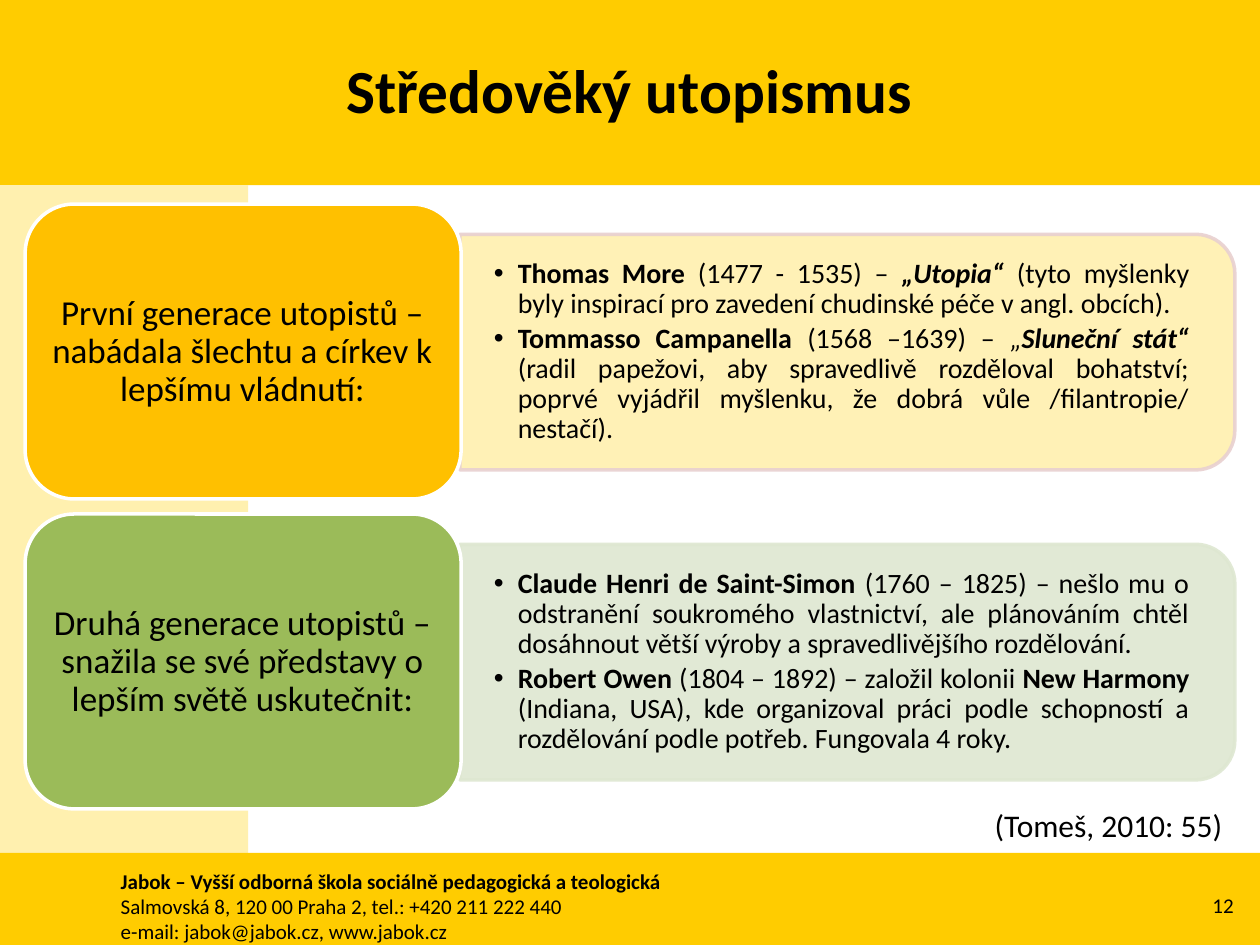
from dataclasses import dataclass

from lxml.etree import SubElement
from pptx import Presentation
from pptx.dml.color import RGBColor
from pptx.enum.shapes import MSO_SHAPE
from pptx.enum.text import MSO_ANCHOR, PP_ALIGN
from pptx.oxml.ns import qn
from pptx.util import Inches, Pt

BLACK = RGBColor(0x00, 0x00, 0x00)
WHITE = RGBColor(0xFF, 0xFF, 0xFF)
YELLOW = RGBColor(0xFF, 0xCC, 0x00)
CREAM = RGBColor(0xFF, 0xF0, 0xAF)
AMBER = RGBColor(0xFF, 0xC0, 0x00)
PINK = RGBColor(0xE8, 0xD0, 0xD0)
GREEN = RGBColor(0x9B, 0xBB, 0x59)
PALE_GREEN = RGBColor(0xDE, 0xE7, 0xD1)

BOLD = {"bold": True}
ITALIC = {"italic": True}
BOLD_ITALIC = {"bold": True, "italic": True}

FIRST_ROW_TOP = 1.62
ROW_PITCH = 2.46
PANEL_OPACITY = 90

Run = tuple[str, dict]
Box = tuple[float, float, float, float]


@dataclass
class Generation:
    label: str
    label_fill: RGBColor
    panel_fill: RGBColor
    panel_line: RGBColor
    bullets: list[list[Run]]


GENERATIONS = [
    Generation(
        "První generace utopistů – nabádala šlechtu a církev k lepšímu vládnutí:",
        AMBER, CREAM, PINK,
        [
            [("Thomas More ", BOLD), ("(1477 - 1535) – ", {}),
             ("„Utopia“ ", BOLD_ITALIC),
             ("(tyto myšlenky byly inspirací pro zavedení chudinské péče "
              "v angl. obcích).", {})],
            [("Tommasso Campanella ", BOLD), ("(1568 –1639) – ", {}),
             ("„", ITALIC), ("Sluneční stát“ ", BOLD_ITALIC),
             ("(radil papežovi, aby spravedlivě rozděloval bohatství; poprvé "
              "vyjádřil myšlenku, že dobrá vůle /filantropie/ nestačí).", {})],
        ]),
    Generation(
        "Druhá generace utopistů – snažila se své představy o lepším světě uskutečnit:",
        GREEN, PALE_GREEN, PALE_GREEN,
        [
            [("Claude Henri de Saint-Simon ", BOLD),
             ("(1760 – 1825) – nešlo mu o odstranění soukromého vlastnictví, ale "
              "plánováním chtěl dosáhnout větší výroby a spravedlivějšího "
              "rozdělování.", {})],
            [("Robert Owen ", BOLD), ("(1804 – 1892) – založil kolonii ", {}),
             ("New Harmony ", BOLD),
             ("(Indiana, USA), kde organizoval práci podle schopností a "
              "rozdělování podle potřeb. Fungovala 4 roky.", {})],
        ]),
]

FOOTER = [
    [("Jabok – Vyšší odborná škola sociálně pedagogická a teologická", BOLD)],
    [("Salmovská 8, 120 00 Praha 2, tel.: +420 211 222 440", {})],
    [("e-mail: jabok@jabok.cz, www.jabok.cz", {})],
]


def add_block(s, kind, box: Box, fill: RGBColor, line: RGBColor | None = None):
    """Draw a filled preset shape, outlined when a line colour is given."""
    sp = s.shapes.add_shape(kind, *map(Inches, box))
    sp.shadow.inherit = False
    sp.fill.solid()
    sp.fill.fore_color.rgb = fill
    if line is None:
        sp.line.fill.background()
    else:
        sp.line.color.rgb = line
        sp.line.width = Pt(2)
    return sp


def set_opacity(sp, percent: int) -> None:
    for color in sp._element.spPr.iter(qn("a:srgbClr")):
        SubElement(color, qn("a:alpha"), val=str(percent * 1000))


def add_bullet(p) -> None:
    pPr = p._p.get_or_add_pPr()
    pPr.set("marL", str(Inches(0.19)))
    pPr.set("indent", str(-Inches(0.19)))
    SubElement(pPr, qn("a:buFont"), typeface="Arial")
    SubElement(pPr, qn("a:buChar"), char="•")


def write(tf, paragraphs: list[list[Run]], size: float, align=PP_ALIGN.LEFT,
          bulleted: bool = False, **spacing) -> None:
    """Fill a text frame; spacing holds further paragraph attributes."""
    for i, runs in enumerate(paragraphs):
        p = tf.paragraphs[0] if i == 0 else tf.add_paragraph()
        for name, value in {"alignment": align, **spacing}.items():
            setattr(p, name, value)
        if bulleted:
            add_bullet(p)
        for text, style in runs:
            r = p.add_run()
            r.text = text
            r.font.color.rgb = BLACK
            font = {"name": "Calibri", "size": Pt(size), "bold": False, **style}
            for name, value in font.items():
                setattr(r.font, name, value)


def add_text(s, box: Box, paragraphs: list[list[Run]], size: float,
             anchor=MSO_ANCHOR.TOP, inset=(0.1, 0.05), **options) -> None:
    tf = s.shapes.add_textbox(*map(Inches, box)).text_frame
    dx, dy = map(Inches, inset)
    frame = {"word_wrap": True, "vertical_anchor": anchor,
             "margin_left": dx, "margin_right": dx,
             "margin_top": dy, "margin_bottom": dy}
    for name, value in frame.items():
        setattr(tf, name, value)
    write(tf, paragraphs, size, **options)


def add_generation(s, top: float, gen: Generation) -> None:
    # Panel: a tall shape turned on its side so the round corners face right
    panel = add_block(s, MSO_SHAPE.ROUND_2_SAME_RECTANGLE,
                      (5.79, top - 1.9, 1.87, 6.15), gen.panel_fill, gen.panel_line)
    panel.rotation = 90
    set_opacity(panel, PANEL_OPACITY)
    add_text(s, (3.65, top + 0.33, 6.06, 1.69), gen.bullets, 16,
             MSO_ANCHOR.MIDDLE, (0.27, 0.14), align=PP_ALIGN.JUSTIFY,
             bulleted=True, line_spacing=0.9, space_after=Pt(2.4))
    # Label
    add_block(s, MSO_SHAPE.ROUNDED_RECTANGLE, (0.2, top, 3.46, 2.34),
              gen.label_fill, WHITE)
    add_text(s, (0.31, top + 0.12, 3.23, 2.11), [[(gen.label, {})]], 20,
             MSO_ANCHOR.MIDDLE, (0.08, 0.04), align=PP_ALIGN.CENTER,
             line_spacing=0.9, space_after=Pt(7))


def main() -> None:
    prs = Presentation()
    prs.slide_width, prs.slide_height = Inches(10), Inches(7.5)
    s = prs.slides.add_slide(prs.slide_layouts[5])

    # Header, side and footer bands
    for box, fill in [((0, 0, 10, 1.47), YELLOW),
                      ((0, 1.47, 1.97, 6.03), CREAM),
                      ((0, 6.77, 10, 0.76), YELLOW)]:
        add_block(s, MSO_SHAPE.RECTANGLE, box, fill)

    # Footer address and page number
    add_text(s, (0.86, 6.84, 8.19, 0.71), FOOTER, 12)
    add_text(s, (9.26, 6.98, 0.63, 0.4), [[("12", {})]], 12,
             MSO_ANCHOR.MIDDLE, align=PP_ALIGN.RIGHT)

    # Two generations of utopians
    for i, gen in enumerate(GENERATIONS):
        add_generation(s, FIRST_ROW_TOP + i * ROW_PITCH, gen)

    # Title, brought in front of the header band
    title = s.shapes.title
    s.shapes._spTree.append(title._element)
    title.left, title.top, title.width, title.height = map(
        Inches, (0.43, 0.36, 9.13, 0.69))
    title.text_frame.vertical_anchor = MSO_ANCHOR.MIDDLE
    write(title.text_frame, [[("Středověký utopismus", BOLD)]], 35, PP_ALIGN.CENTER)

    # Source
    add_text(s, (6.89, 6.35, 2.91, 0.4), [[("(Tomeš, 2010: 55)", {})]], 18,
             align=PP_ALIGN.RIGHT)

    prs.save("out.pptx")


if __name__ == "__main__":
    main()
